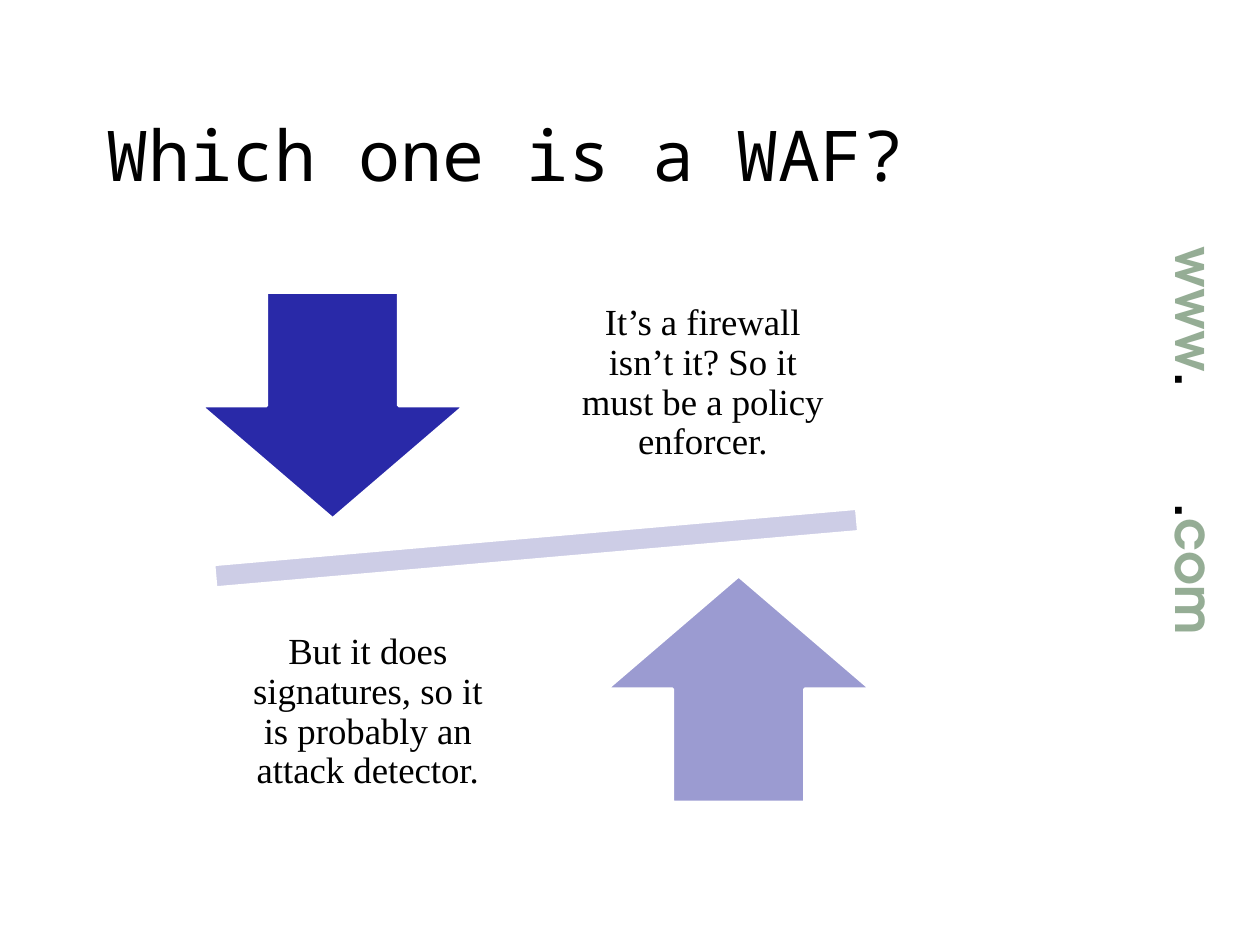
from pptx import Presentation
from pptx.dml.color import RGBColor
from pptx.enum.shapes import MSO_SHAPE
from pptx.enum.text import MSO_ANCHOR, PP_ALIGN
from pptx.util import Pt
from lxml.etree import SubElement
from pptx.oxml.ns import qn

COLORS = {
    "ink": "000000",
    "paper": "FFFFFF",
    "sage": "95AD95",
    "navy": "2929A8",
    "lavender": "9B9BD1",
    "mist": "CDCDE6",
}
TITLE = {"name": "Noto Sans Mono", "size": Pt(40), "bold": False}
BODY = {"name": "Times New Roman", "size": Pt(21), "bold": False}
ADDRESS = {"name": "TeX Gyre Adventor", "size": Pt(30), "bold": True}
CENTERED = {"alignment": PP_ALIGN.CENTER, "line_spacing": 0.9}


class SlideBuilder:
    """Holds the colours and the current slide, and adds elements to it."""

    def __init__(self, page, colors):
        self.page = page
        self.colors = colors

    def color(self, name):
        return RGBColor.from_string(self.colors[name])

    def text(self, bounds, spans, font, layout=None, inset=None, tab=None, rotation=0):
        box = self.page.shapes.add_textbox(*map(Pt, bounds))
        box.rotation = rotation
        frame = box.text_frame
        frame.word_wrap = True
        frame.vertical_anchor = MSO_ANCHOR.MIDDLE
        if inset is not None:
            for side in ("left", "top", "right", "bottom"):
                setattr(frame, f"margin_{side}", Pt(inset))
        para = frame.paragraphs[0]
        if tab is not None:
            stops = SubElement(para._p.get_or_add_pPr(), qn("a:tabLst"))
            SubElement(stops, qn("a:tab"), pos=str(Pt(tab)), algn="l")
        for name, value in (layout or {}).items():
            setattr(para, name, value)
        for words, color in spans:
            span = para.add_run()
            span.text = words
            for name, value in font.items():
                setattr(span.font, name, value)
            span.font.color.rgb = self.color(color)

    def shape(self, kind, bounds, fill, rotation=0):
        shape = self.page.shapes.add_shape(kind, *map(Pt, bounds))
        shape.rotation = rotation
        shape.shadow.inherit = False
        shape.fill.solid()
        shape.fill.fore_color.rgb = self.color(fill)
        shape.line.color.rgb = self.color("paper")
        shape.line.width = Pt(2)


def main():
    deck = Presentation()
    deck.slide_width, deck.slide_height = Pt(720), Pt(540)
    builder = SlideBuilder(deck.slides.add_slide(deck.slide_layouts[6]), COLORS)

    address = [("www", "sage"), (".\t.", "ink"), ("com", "sage")]
    builder.text((561.6, 234, 244, 43.2), address, ADDRESS, tab=147, rotation=90)
    builder.text((54, 60.5, 556, 54), [("Which one is a WAF?", "ink")], TITLE)

    builder.shape(MSO_SHAPE.MATH_MINUS, (55.4, 284.4, 502, 57.6), "mist", rotation=355)
    sides = [
        (MSO_SHAPE.DOWN_ARROW, (114.5, 167), "navy", (321, 151.2),
         "It’s a firewall isn’t it? So it must be a policy enforcer."),
        (MSO_SHAPE.UP_ARROW, (346.5, 329), "lavender", (129.6, 339.1),
         "But it does signatures, so it is probably an attack detector."),
    ]
    for kind, arrow_corner, fill, text_corner, words in sides:
        builder.shape(kind, (*arrow_corner, 151.2, 129.6), fill)
        builder.text((*text_corner, 161.3, 136), [(words, "ink")], BODY, CENTERED, inset=11.5)

    deck.save("out.pptx")


if __name__ == "__main__":
    main()
